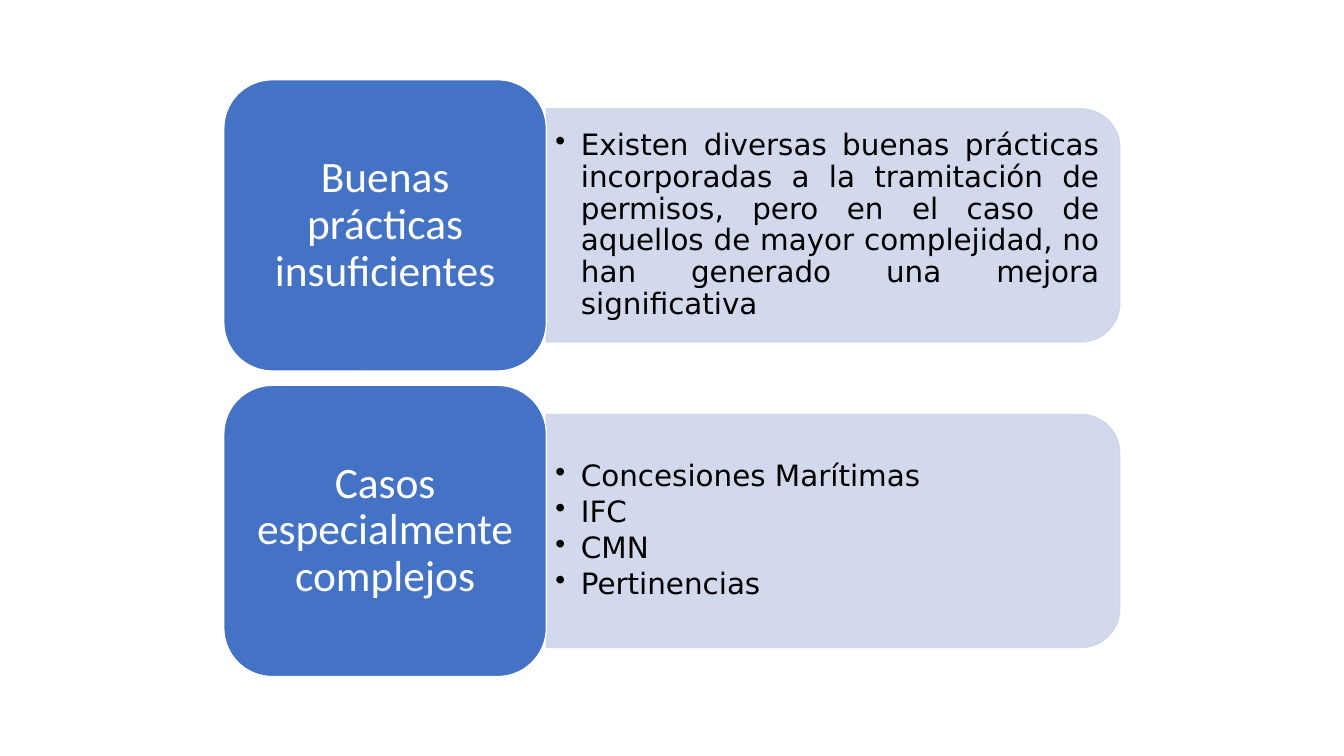
import pptx
import pptx.util
import pptx.dml.color
import pptx.enum.shapes
import pptx.enum.text
import pptx.oxml.ns
from lxml import etree

Cm, Pt = pptx.util.Cm, pptx.util.Pt
SHAPE = pptx.enum.shapes.MSO_SHAPE
ALIGN = pptx.enum.text.PP_ALIGN
MIDDLE = pptx.enum.text.MSO_ANCHOR.MIDDLE
qn = pptx.oxml.ns.qn


def rgb(code):
    return pptx.dml.color.RGBColor.from_string(code)


def write(p, text, font, size, color, align, after):
    p.alignment = align
    p.line_spacing = 0.9
    p.space_after = Pt(after)
    r = p.add_run()
    r.text = text
    r.font.name = font
    r.font.size = Pt(size)
    r.font.color.rgb = rgb(color)


ROWS = [
    ("Buenas prácticas insuficientes", ALIGN.JUSTIFY, [
        "Existen diversas buenas prácticas incorporadas a la tramitación de "
        "permisos, pero en el caso de aquellos de mayor complejidad, no han "
        "generado una mejora significativa"]),
    ("Casos especialmente complejos", ALIGN.LEFT, [
        "Concesiones Marítimas", "IFC", "CMN", "Pertinencias"]),
]
TOP, PITCH = 2.01, 7.7
LEFT, TITLE_W, TITLE_H = 5.64, 8.13, 7.34
PANEL_W, PANEL_H = 14.45, 5.87
TEXT_W, TEXT_H = 14.17, 5.31
PANEL_LEFT = LEFT + TITLE_W

prs = pptx.Presentation()
prs.slide_width, prs.slide_height = Cm(33.87), Cm(19.05)
s = prs.slides.add_slide(prs.slide_layouts[6])

for i, (title, align, points) in enumerate(ROWS):
    top = TOP + i * PITCH
    middle = top + TITLE_H / 2

    # Turned a quarter, so the rounded top corners face right
    panel = s.shapes.add_shape(
        SHAPE.ROUND_2_SAME_RECTANGLE,
        Cm(PANEL_LEFT + (PANEL_W - PANEL_H) / 2), Cm(middle - PANEL_W / 2),
        Cm(PANEL_H), Cm(PANEL_W))
    panel.rotation = 90
    panel.shadow.inherit = False
    panel.fill.solid()
    panel.fill.fore_color.rgb = rgb("CFD5EA")
    panel.line.color.rgb = rgb("CFD5EA")
    panel.line.width = Pt(1)
    for color in panel._element.spPr.iter(qn("a:srgbClr")):
        etree.SubElement(color, qn("a:alpha"), val="90000")

    box = s.shapes.add_textbox(Cm(PANEL_LEFT), Cm(middle - TEXT_H / 2),
                               Cm(TEXT_W), Cm(TEXT_H))
    tf = box.text_frame
    tf.word_wrap = True
    tf.vertical_anchor = MIDDLE
    tf.margin_left = tf.margin_right = Cm(0.23)
    tf.margin_top = tf.margin_bottom = Cm(0.11)
    for n, point in enumerate(points):
        p = tf.add_paragraph() if n else tf.paragraphs[0]
        p.level = 1
        pPr = p._p.get_or_add_pPr()
        pPr.set("marL", str(Cm(0.64)))
        pPr.set("indent", str(-Cm(0.64)))
        etree.SubElement(pPr, qn("a:buChar"), char="•")
        write(p, point, "DejaVu Sans", 21, "000000", align, 3)

    sp = s.shapes.add_shape(SHAPE.ROUNDED_RECTANGLE, Cm(LEFT), Cm(top),
                            Cm(TITLE_W), Cm(TITLE_H))
    sp.shadow.inherit = False
    sp.fill.solid()
    sp.fill.fore_color.rgb = rgb("4472C4")
    sp.line.color.rgb = rgb("FFFFFF")
    sp.line.width = Pt(1)
    tf = sp.text_frame
    tf.word_wrap = True
    tf.vertical_anchor = MIDDLE
    tf.margin_left = tf.margin_right = Cm(0.33)
    tf.margin_top = tf.margin_bottom = Cm(0.16)
    write(tf.paragraphs[0], title, "Calibri", 31, "FFFFFF", ALIGN.CENTER, 11)

prs.save("out.pptx")
